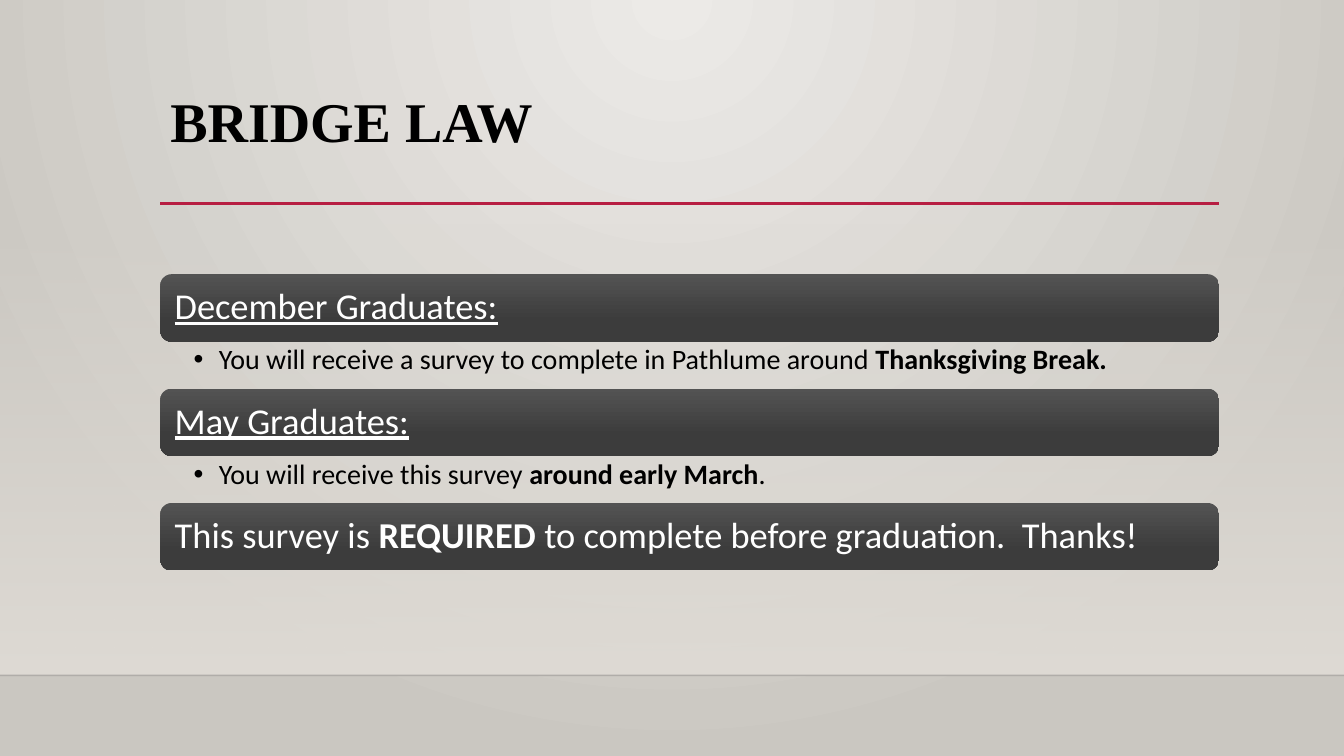
"""Build the Bridge Law graduation survey slide."""
from dataclasses import dataclass

from pptx import Presentation, util as u
from pptx.dml.color import RGBColor
from pptx.enum import shapes, text
from pptx.oxml import parse_xml
from pptx.oxml.ns import nsdecls, qn


@dataclass(frozen=True)
class Theme:
    """Hold the colours, fonts and type sizes."""
    ink: str = "000000"
    light: str = "FFFFFF"
    accent: str = "B71E42"
    edge: str = "000001"
    backdrop: tuple = ((0, "ECEAE7", 100), (100, "CAC7C1", 100))
    wall: tuple = ((0, "DFDBD5", 0), (100, "DFDBD5", 100))
    bar: tuple = ((0, "535353", 100), (69, "3C3C3C", 100), (100, "393939", 100))
    title_font: str = "Times New Roman"
    body_font: str = "Calibri"
    title_size: int = 40
    bar_size: int = 26
    note_size: int = 20


T = Theme()
WIDTH, HEIGHT = u.Inches(13.33), u.Inches(7.5)
LEFT, SPAN = 11.93, 78.77
FIRST_ROW, BAR_H, NOTE_H = 36.27, 8.93, 6.2
LINEAR = '<a:lin {} ang="5400000" scaled="0"/>'
RADIAL = ('<a:path {} path="circle">'
          '<a:fillToRect l="43000" t="0" r="43000" b="100000"/></a:path>')
SECTIONS = [
    ([("December Graduates:", "u")],
     [("You will receive a survey to complete in Pathlume around ", ""),
      ("Thanksgiving Break.", "b")]),
    ([("May Graduates:", "u")],
     [("You will receive this survey ", ""), ("around early March", "b"), (".", "")]),
    ([("This survey is ", ""), ("REQUIRED", "b"),
      (" to complete before graduation.  Thanks!", "")], None),
]


def box(x, y, w, h):
    """Turn percentages of the slide into a position and size."""
    return (round(WIDTH * x / 100), round(HEIGHT * y / 100),
            round(WIDTH * w / 100), round(HEIGHT * h / 100))


def place(sp, *area):
    """Move a placeholder to an area given in percentages."""
    sp.left, sp.top, sp.width, sp.height = box(*area)


def shade(owner, fill, stops, direction=LINEAR):
    """Give an owner's fill a gradient with the given stops."""
    fill.gradient()
    grad = owner.element.find(".//" + qn("a:gradFill"))
    for child in list(grad):
        grad.remove(child)
    marks = "".join(
        f'<a:gs pos="{pos * 1000}"><a:srgbClr val="{color}">'
        f'<a:alpha val="{alpha * 1000}"/></a:srgbClr></a:gs>'
        for pos, color, alpha in stops)
    grad.append(parse_xml(f'<a:gsLst {nsdecls("a")}>{marks}</a:gsLst>'))
    grad.append(parse_xml(direction.format(nsdecls("a"))))


def write(sp, runs, font=T.body_font, size=T.note_size, color=T.ink, bullet=False,
          anchor=text.MSO_ANCHOR.TOP, insets=(0.1, 0.05, 0.1, 0.05)):
    """Write formatted runs as one paragraph in a shape."""
    tf = sp.text_frame
    tf.word_wrap, tf.auto_size = True, text.MSO_AUTO_SIZE.NONE
    tf.vertical_anchor = anchor
    (tf.margin_left, tf.margin_top,
     tf.margin_right, tf.margin_bottom) = map(u.Inches, insets)
    p = tf.paragraphs[0]
    p.alignment, p.line_spacing, p.space_before = text.PP_ALIGN.LEFT, 0.9, u.Pt(0)
    if bullet:
        props = p._p.get_or_add_pPr()
        props.set("marL", str(u.Inches(0.25)))
        props.set("indent", str(-u.Inches(0.25)))
        props.append(parse_xml(f'<a:buChar {nsdecls("a")} char="•"/>'))
    for words, style in runs:
        r = p.add_run()
        r.text = words
        r.font.name, r.font.size = font, u.Pt(size)
        r.font.color.rgb = RGBColor.from_string(color)
        r.font.bold, r.font.underline = "b" in style, "u" in style


def add_block(s, kind, area, stops):
    """Add a borderless shape with a gradient."""
    sp = s.shapes.add_shape(kind, *box(*area))
    sp.shadow.inherit = False
    sp.line.fill.background()
    shade(sp, sp.fill, stops)
    return sp


def add_rule(s, x, y, w, color, weight, alpha=100):
    """Add a horizontal line."""
    left, top, width, _ = box(x, y, w, 0)
    sp = s.shapes.add_connector(shapes.MSO_CONNECTOR.STRAIGHT,
                                left, top, left + width, top)
    sp.line.width = u.Pt(weight)
    sp.line.color.rgb = RGBColor.from_string(color)
    sp.element.find(".//" + qn("a:srgbClr")).append(
        parse_xml(f'<a:alpha {nsdecls("a")} val="{alpha * 1000}"/>'))
    sp.element.spPr.append(parse_xml(f'<a:effectLst {nsdecls("a")}/>'))


def main():
    """Build and save the slide."""
    prs = Presentation()
    prs.slide_width, prs.slide_height = WIDTH, HEIGHT
    s = prs.slides.add_slide(prs.slide_layouts.get_by_name("Two Content"))
    shade(s, s.background.fill, T.backdrop, RADIAL)
    title, *notes = s.placeholders

    wall = add_block(s, shapes.MSO_SHAPE.RECTANGLE, (0, 29.47, 100, 59.86), T.wall)
    title.element.addprevious(wall.element)
    add_rule(s, 0, 89.33, 100, T.edge, 1, alpha=20)
    add_rule(s, LEFT, 26.93, SPAN, T.accent, 2.5)

    place(title, LEFT, 11.73, SPAN, 15.33)
    write(title, [("BRIDGE LAW", "b")], font=T.title_font, size=T.title_size)

    notes = iter(notes)
    for row, (heading, detail) in enumerate(SECTIONS):
        top = FIRST_ROW + row * (BAR_H + NOTE_H)
        bar = add_block(s, shapes.MSO_SHAPE.ROUNDED_RECTANGLE,
                        (LEFT, top, SPAN, BAR_H), T.bar)
        write(bar, heading, size=T.bar_size, color=T.light,
              anchor=text.MSO_ANCHOR.MIDDLE, insets=(0.11,) * 4)
        if detail:
            note = next(notes)
            place(note, LEFT, top + BAR_H, SPAN, NOTE_H)
            write(note, detail, bullet=True, insets=(0.33, 0.04, 0.2, 0.04))

    prs.save("out.pptx")


if __name__ == "__main__":
    main()
